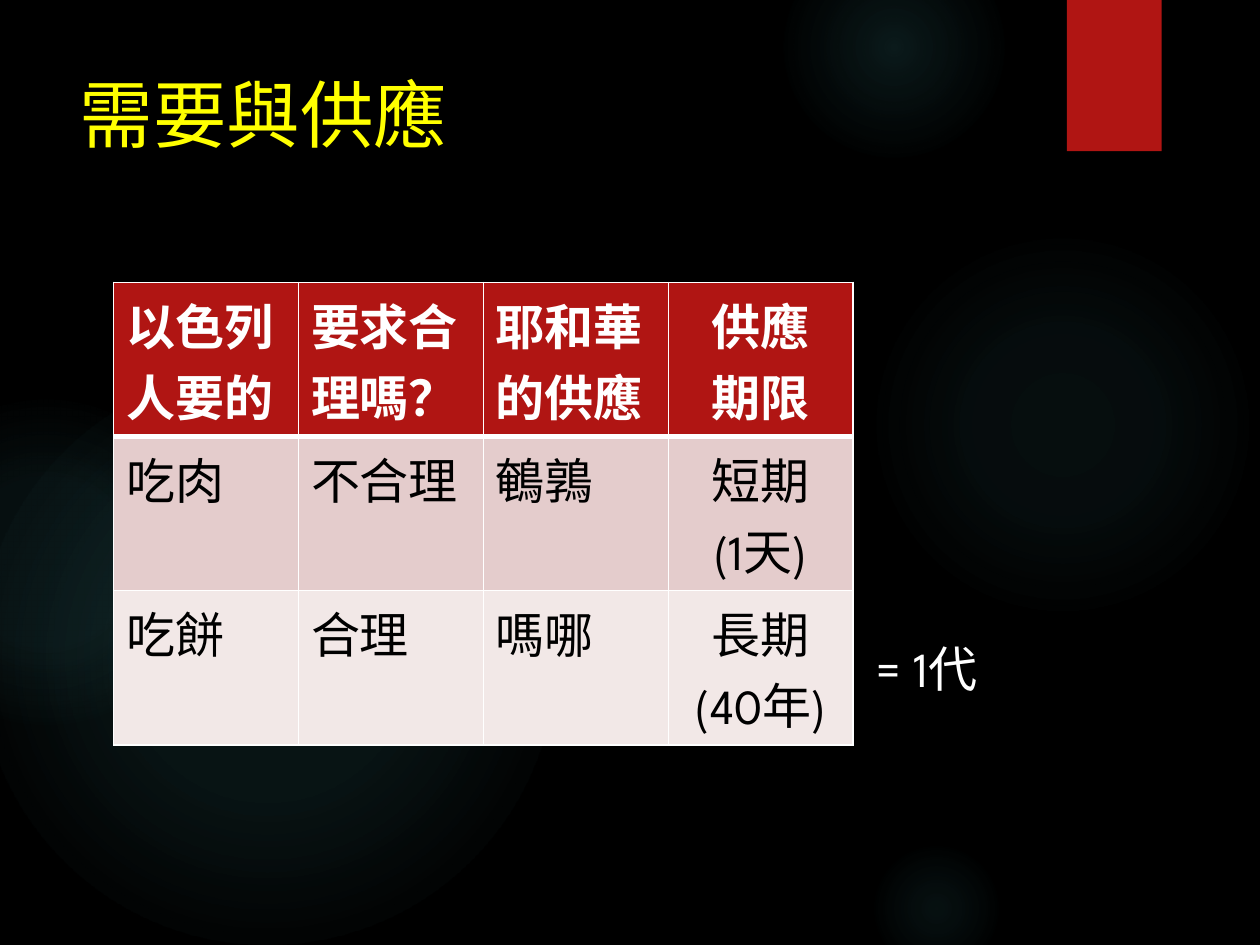
from lxml.etree import SubElement
from pptx import Presentation
from pptx.dml.color import RGBColor
from pptx.enum.shapes import MSO_SHAPE as Shape
from pptx.enum.text import MSO_ANCHOR as Anchor, MSO_AUTO_SIZE as AutoSize, PP_ALIGN as Align
from pptx.oxml.ns import qn
from pptx.util import Cm, Pt

FONT = "League Spartan"
COLORS = {
    "black": "000000", "white": "FFFFFF", "title": "FFFF00", "accent": "B01513",
    "glow": "50B9C1", "band_dark": "E4CCCC", "band_light": "F2E8E7",
}

# Left, top and diameter in cm, then (position %, opacity %) stops
GLOWS = [
    (17.5, 4.65, 7.82, [(0, 7), (36, 6), (69, 0)]),
    (15.8, -1.27, 4.45, [(0, 14), (36, 7), (73, 0)]),
    (17.5, 16.94, 2.74, [(0, 9), (36, 5), (66, 0)]),
    (-0.43, 7.42, 11.63, [(0, 11), (36, 10), (75, 0)]),
    (-2.34, 8.05, 6.55, [(0, 8), (36, 8), (72, 0)]),
]

HEADER = ["以色列人要的", "要求合理嗎？", "耶和華的供應", "供應\n期限"]
ROWS = [
    ["吃肉", "不合理", "鵪鶉", "短期\n(1天)"],
    ["吃餅", "合理", "嗎哪", "長期\n(40年)"],
]


def rgb(name):
    return RGBColor.from_string(COLORS[name])


def child(parent, tag, **attributes):
    return SubElement(parent, qn(tag), {key: str(value) for key, value in attributes.items()})


def add_color(parent, name, opacity=100):
    color = child(parent, "a:srgbClr", val=COLORS[name])
    child(color, "a:alpha", val=opacity * 1000)


def write(frame, text, size, color, bold=False, align=Align.LEFT):
    for index, line in enumerate(text.split("\n")):
        para = frame.add_paragraph() if index else frame.paragraphs[0]
        para.alignment = align
        span = para.add_run()
        span.text = line
        span.font.name, span.font.size, span.font.bold = FONT, Pt(size), bold
        span.font.color.rgb = rgb(color)


def add_glow(slide, left, top, diameter, stops):
    glow = slide.shapes.add_shape(Shape.OVAL, Cm(left), Cm(top), Cm(diameter), Cm(diameter))
    glow.shadow.inherit = False
    glow.line.fill.background()
    # Radial gradient that fades out from the centre
    glow.fill.gradient()
    gradient = glow.element.spPr.find(qn("a:gradFill"))
    for part in list(gradient):
        gradient.remove(part)
    stop_list = child(gradient, "a:gsLst")
    for position, opacity in stops:
        add_color(child(stop_list, "a:gs", pos=position * 1000), "glow", opacity)
    center = child(gradient, "a:path", path="circle")
    child(center, "a:fillToRect", l=50000, t=50000, r=50000, b=50000)


def add_ribbon(slide, left, top, width, height):
    ribbon = slide.shapes.add_shape(Shape.RECTANGLE, left, top, width, height)
    ribbon.fill.solid()
    ribbon.fill.fore_color.rgb = rgb("accent")
    ribbon.line.fill.background()
    ribbon.shadow.inherit = False
    effects = ribbon.element.spPr.find(qn("a:effectLst"))
    shadow = child(effects, "a:outerShdw", blurRad=Pt(3), dist=Pt(2), dir=90 * 60000, rotWithShape=0)
    add_color(shadow, "black", 45)


def place_title(slide, left, top, width, height):
    title = slide.shapes.title
    title.left, title.top, title.width, title.height = left, top, width, height
    title.text_frame.vertical_anchor = Anchor.TOP
    write(title.text_frame, "需要與供應", 42, "title")
    # Bring the title in front of the backdrop
    title.element.getparent().append(title.element)


def style_cell(cell, text, column, fill, color, header):
    align = Align.CENTER if column == len(HEADER) - 1 else Align.LEFT
    write(cell.text_frame, text, 28, color, header, align)
    properties = cell._tc.get_or_add_tcPr()
    for side in "LRTB":
        width = 3 if header and side == "B" else 1
        border = child(properties, f"a:ln{side}", w=Pt(width))
        add_color(child(border, "a:solidFill"), "white")
    cell.fill.solid()
    cell.fill.fore_color.rgb = rgb(fill)


def add_supply_table(slide, left, top, width, height):
    data = [HEADER, *ROWS]
    table = slide.shapes.add_table(len(data), len(HEADER), left, top, width, height).table
    fills = ["accent", "band_dark", "band_light"]
    for row, (texts, fill) in enumerate(zip(data, fills)):
        header = row == 0
        for column, text in enumerate(texts):
            color = "white" if header else "black"
            style_cell(table.cell(row, column), text, column, fill, color, header)


def add_note(slide, left, top, width, height):
    box = slide.shapes.add_textbox(left, top, width, height)
    box.text_frame.word_wrap = True
    box.text_frame.auto_size = AutoSize.SHAPE_TO_FIT_TEXT
    write(box.text_frame, "= 1代", 28, "white")


def main():
    deck = Presentation()
    deck.slide_width, deck.slide_height = Cm(25.4), Cm(19.05)
    slide = deck.slides.add_slide(deck.slide_layouts[5])

    # Backdrop
    slide.background.fill.solid()
    slide.background.fill.fore_color.rgb = rgb("black")
    for glow in GLOWS:
        add_glow(slide, *glow)
    add_ribbon(slide, Cm(21.51), Cm(0), Cm(1.91), Cm(3.05))

    # Content
    place_title(slide, Cm(1.35), Cm(1.27), Cm(19.61), Cm(3.89))
    add_supply_table(slide, Cm(2.29), Cm(5.69), Cm(14.91), Cm(8.71))
    add_note(slide, Cm(17.42), Cm(12.75), Cm(3.86), Cm(1.45))
    deck.save("out.pptx")


if __name__ == "__main__":
    main()
